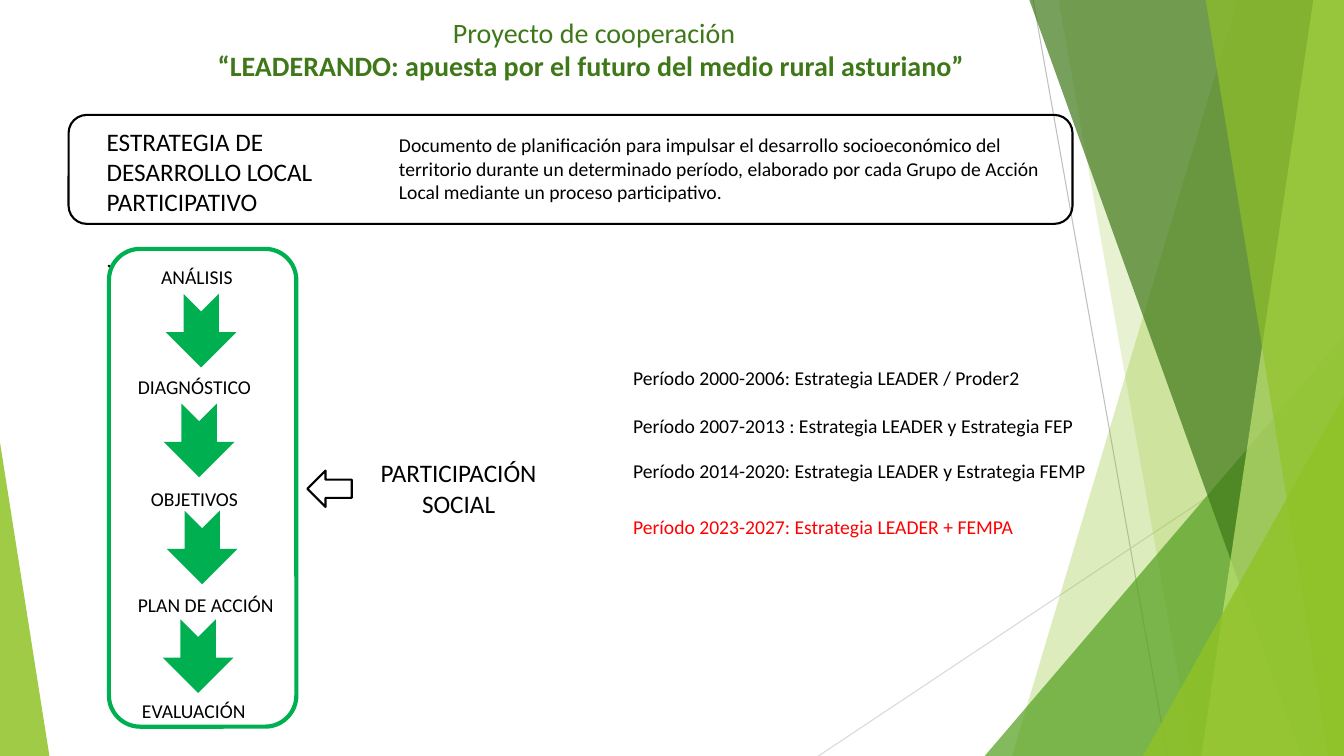
from dataclasses import dataclass

from lxml.etree import SubElement
from pptx import Presentation
from pptx.dml.color import RGBColor
from pptx.enum.shapes import MSO_CONNECTOR, MSO_SHAPE
from pptx.enum.text import MSO_ANCHOR, MSO_AUTO_SIZE, PP_ALIGN
from pptx.oxml.ns import qn
from pptx.util import Pt


@dataclass(frozen=True)
class Theme:
    font: str = "Calibri"
    ink: str = "000000"
    paper: str = "FFFFFF"
    alert: str = "FF0000"
    flow: str = "00B050"
    lime: str = "90C226"
    leaf: str = "54A021"
    forest: str = "3F7819"
    pale: str = "C0E474"
    grey: str = "BFBFBF"
    light_grey: str = "D9D9D9"
    title_size: int = 20
    heading_size: int = 18
    text_size: int = 14


THEME = Theme()
WIDTH, HEIGHT = 960, 540
STAGES = [
    ("ANÁLISIS", 108, 185.8, 72.7),
    ("DIAGNÓSTICO", 91.4, 264.2, 108),
    ("OBJETIVOS", 100.8, 344.2, 89.3),
    ("PLAN DE ACCIÓN", 91.4, 419.8, 126.7),
    ("EVALUACIÓN", 94.3, 495.4, 99.4),
]
STAGE_ARROWS = [(117.4, 211), (115.9, 289.4), (118.1, 365.8), (115.2, 443.5)]
PERIODS = [
    ("Período 2000-2006: Estrategia LEADER / Proder2", 0, THEME.ink),
    ("Período 2007-2013 : Estrategia LEADER y Estrategia FEP", 17.4, THEME.ink),
    ("Período 2014-2020: Estrategia LEADER y Estrategia FEMP", 15.4, THEME.ink),
    ("Período 2023-2027: Estrategia LEADER + FEMPA", 23.2, THEME.alert),
]


def colour(value):
    return RGBColor.from_string(value)


def paint(shape, fill=None, opacity=100, line=None, line_width=0):
    shape.shadow.inherit = False
    if fill:
        shape.fill.solid()
        shape.fill.fore_color.rgb = colour(fill)
        if opacity < 100:
            tint = shape.fill._xPr.find(qn("a:solidFill"))[0]
            SubElement(tint, qn("a:alpha")).set("val", str(opacity * 1000))
    else:
        shape.fill.background()
    if line:
        shape.line.color.rgb = colour(line)
        shape.line.width = Pt(line_width)
    else:
        shape.line.fill.background()


def add_preset(slide, kind, frame, **style):
    shape = slide.shapes.add_shape(kind, *map(Pt, frame))
    paint(shape, **style)
    return shape


def add_facet(slide, top_left, bottom_left, fill, opacity):
    top = -0.6
    outline = slide.shapes.build_freeform(Pt(top_left), Pt(top))
    corners = [(WIDTH, top), (WIDTH, HEIGHT), (bottom_left, HEIGHT)]
    outline.add_line_segments([(Pt(x), Pt(y)) for x, y in corners], close=True)
    paint(outline.convert_to_shape(), fill, opacity)


def add_corner(slide, frame, tip, fill, opacity):
    corner = add_preset(slide, MSO_SHAPE.ISOSCELES_TRIANGLE, frame, fill=fill, opacity=opacity)
    corner.adjustments[0] = tip


def add_hairline(slide, start, end, line):
    hairline = slide.shapes.add_connector(MSO_CONNECTOR.STRAIGHT, *map(Pt, start + end))
    hairline.line.color.rgb = colour(line)
    hairline.line.width = Pt(0.75)
    SubElement(hairline._element.spPr, qn("a:effectLst"))


def format_paragraph(paragraph, size, ink, align=PP_ALIGN.LEFT, bold=False):
    paragraph.alignment = align
    for run in paragraph.runs:
        run.font.name = THEME.font
        run.font.size = Pt(size)
        run.font.bold = bold
        run.font.color.rgb = colour(ink)


def add_label(slide, text, frame, size=THEME.text_size, wrap=True, align=PP_ALIGN.LEFT):
    label = slide.shapes.add_textbox(*map(Pt, frame))
    label.text_frame.word_wrap = wrap
    label.text_frame.text = text
    for paragraph in label.text_frame.paragraphs:
        format_paragraph(paragraph, size, THEME.ink, align)
    return label


def fill_placeholder(placeholder, text, frame):
    placeholder.left, placeholder.top, placeholder.width, placeholder.height = map(Pt, frame)
    text_frame = placeholder.text_frame
    text_frame.text = text
    text_frame.auto_size = MSO_AUTO_SIZE.NONE
    text_frame.vertical_anchor = MSO_ANCHOR.TOP
    return text_frame.paragraphs


def add_backdrop(slide):
    add_hairline(slide, (738, 0), (833.8, HEIGHT), THEME.grey)
    add_hairline(slide, (WIDTH, 290.2), (584.6, HEIGHT), THEME.light_grey)
    add_facet(slide, 884.2, 722.9, THEME.lime, 30)
    add_facet(slide, 756, 851.8, THEME.lime, 20)
    add_corner(slide, (703.4, 239.8, 256.6, 300.2), 1, THEME.leaf, 72)
    add_facet(slide, 735.1, 929.5, THEME.forest, 70)
    add_facet(slide, 938.2, 858.2, THEME.pale, 70)
    add_facet(slide, 861.1, 949, THEME.lime, 65)
    add_corner(slide, (816.5, 283, 143.5, 257), 1, THEME.lime, 80)
    add_corner(slide, (0, 316.1, 35.3, 223.9), 0, THEME.lime, 85)


def add_title(slide):
    heading, project = fill_placeholder(
        slide.shapes.title,
        "Proyecto de cooperación\n“LEADERANDO: apuesta por el futuro del medio rural asturiano” ",
        (37.4, 7.2, 774, 55.4),
    )
    format_paragraph(heading, THEME.title_size, THEME.forest, PP_ALIGN.CENTER)
    format_paragraph(project, THEME.title_size, THEME.forest, PP_ALIGN.CENTER, bold=True)


def add_periods(slide):
    paragraphs = fill_placeholder(
        slide.placeholders[1],
        "\n".join(text for text, _, _ in PERIODS),
        (445, 257.8, 424, 132),
    )
    for paragraph, (_, gap, ink) in zip(paragraphs, PERIODS):
        properties = paragraph._p.get_or_add_pPr()
        properties.set("marL", "0")
        properties.set("indent", "0")
        SubElement(properties, qn("a:buNone"))
        paragraph.space_before = Pt(gap)
        format_paragraph(paragraph, THEME.text_size, ink)


def add_process(slide):
    for x, y in STAGE_ARROWS:
        arrow = add_preset(
            slide, MSO_SHAPE.NOTCHED_RIGHT_ARROW, (x, y, 52.6, 50.4), fill=THEME.flow
        )
        arrow.rotation = 90
    for stage, x, y, width in STAGES:
        add_label(slide, stage, (x, y, width, 24.5), wrap=False)
    add_preset(
        slide, MSO_SHAPE.ROUNDED_RECTANGLE, (77.8, 177.8, 133.9, 341.3),
        line=THEME.flow, line_width=3,
    )
    add_label(
        slide, "PARTICIPACIÓN\nSOCIAL", (255.6, 323.3, 144, 51.1),
        THEME.heading_size, wrap=False, align=PP_ALIGN.CENTER,
    )
    add_preset(
        slide, MSO_SHAPE.LEFT_ARROW, (219.6, 336.2, 31.7, 25.9),
        fill=THEME.paper, line=THEME.ink, line_width=1.5,
    )


def add_definition(slide):
    strategy = add_label(
        slide, "ESTRATEGIA DE\nDESARROLLO LOCAL\nPARTICIPATIVO\n.",
        (69.1, 86.4, 208.8, 111.6), THEME.heading_size,
    )
    full_stop = strategy.text_frame.paragraphs[-1]
    full_stop.space_before = Pt(22)
    format_paragraph(full_stop, THEME.text_size, THEME.ink)
    add_preset(
        slide, MSO_SHAPE.ROUNDED_RECTANGLE, (49, 82.1, 717.1, 77.8),
        line=THEME.ink, line_width=1.5,
    )
    add_label(
        slide,
        "Documento de planificación para impulsar el desarrollo socioeconómico del territorio "
        "durante un determinado período, elaborado por cada Grupo de Acción Local mediante "
        "un proceso participativo.",
        (277.9, 91.4, 478.1, 58.3),
    )


def main():
    presentation = Presentation()
    presentation.slide_width, presentation.slide_height = Pt(WIDTH), Pt(HEIGHT)
    slide = presentation.slides.add_slide(presentation.slide_layouts[1])
    add_backdrop(slide)
    add_title(slide)
    add_periods(slide)
    add_process(slide)
    add_definition(slide)
    presentation.save("out.pptx")


if __name__ == "__main__":
    main()
